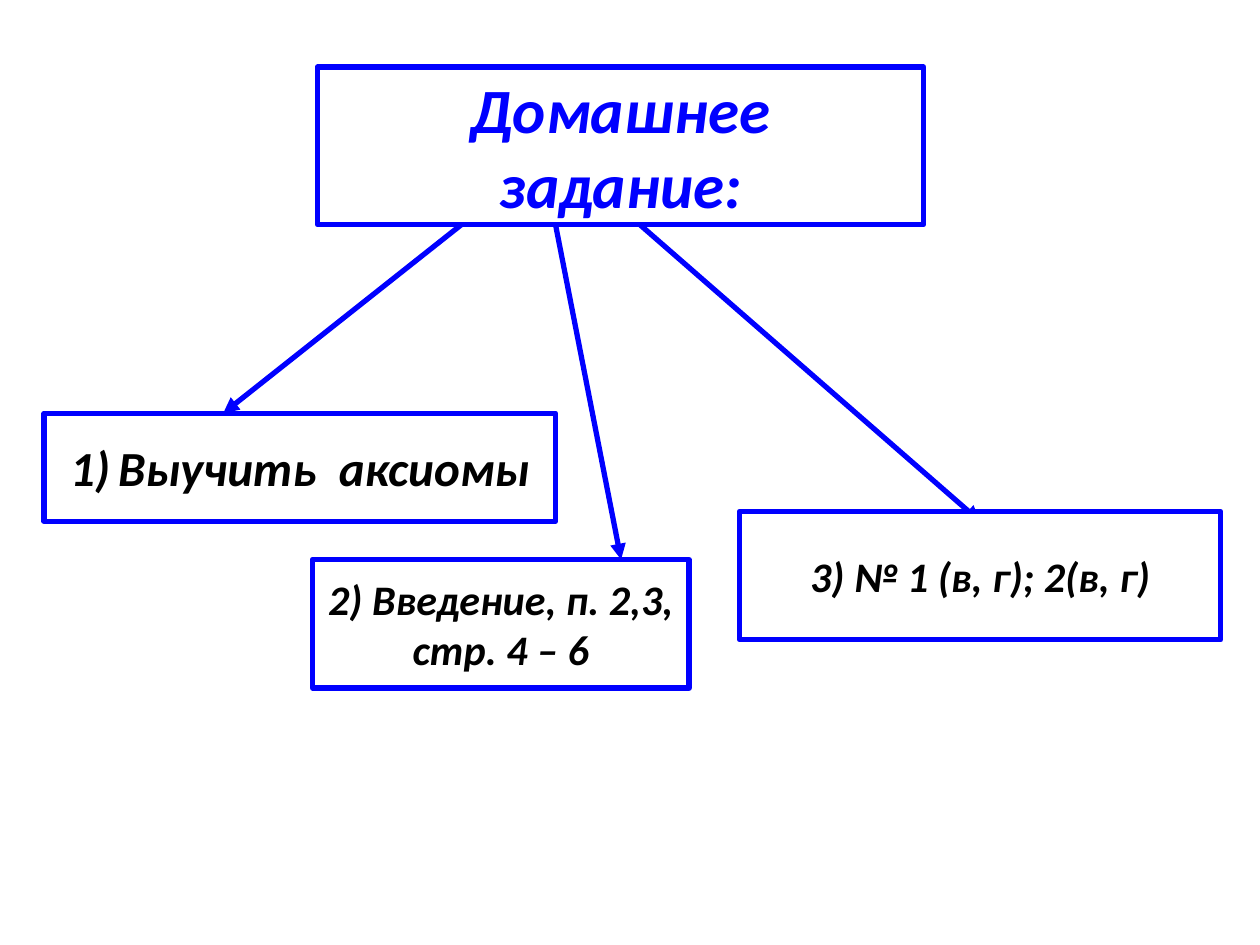
import pptx
import pptx.util
import pptx.dml.color
import pptx.enum.shapes
import pptx.enum.text
import pptx.oxml.ns
import lxml.etree

Cm, Pt = pptx.util.Cm, pptx.util.Pt
qn = pptx.oxml.ns.qn
BLUE, BLACK, WHITE = "0000FF", "000000", "FFFFFF"

# Boxes: left, top, width, height in cm
TITLE = (6.4, 1.35, 12.22, 3.18)
AXIOMS = (0.89, 8.33, 10.31, 2.18)
READING = (6.3, 11.28, 7.59, 2.59)
EXERCISES = (14.91, 10.31, 9.7, 2.59)


def rgb(color):
    return pptx.dml.color.RGBColor.from_string(color)


def style_line(line):
    line.color.rgb = rgb(BLUE)
    line.width = Pt(3)


def add_box(s, box, lines, size, color=BLACK, wrap=False):
    """Outlined box with centred bold italic text; returns its text frame."""
    sp = s.shapes.add_shape(pptx.enum.shapes.MSO_SHAPE.RECTANGLE, *map(Cm, box))
    sp.shadow.inherit = False
    sp.fill.solid()
    sp.fill.fore_color.rgb = rgb(WHITE)
    style_line(sp.line)
    tf = sp.text_frame
    tf.word_wrap = wrap
    tf.vertical_anchor = pptx.enum.text.MSO_ANCHOR.MIDDLE
    tf.text = "\n".join(lines)
    for p in tf.paragraphs:
        p.alignment = pptx.enum.text.PP_ALIGN.CENTER
        font = p.font
        font.name, font.size = "Calibri", Pt(size)
        font.bold = font.italic = True
        font.color.rgb = rgb(color)
    return tf


def number_paragraph(p):
    """Automatic "1)" numbering with a hanging indent."""
    pPr = p._p.get_or_add_pPr()
    pPr.set("marL", str(Cm(0.97)))
    pPr.set("indent", str(-Cm(0.97)))
    num = lxml.etree.Element(qn("a:buAutoNum"), type="arabicParenR")
    pPr.insert(0, num)


def add_arrow(s, source, source_dx, target, target_dx, target_dy=0):
    """Arrow from the bottom edge of one box to the top of another."""
    x, y, _, h = source
    end_x, end_y = target[:2]
    cxn = s.shapes.add_connector(
        pptx.enum.shapes.MSO_CONNECTOR.STRAIGHT,
        Cm(x + source_dx), Cm(y + h),
        Cm(end_x + target_dx), Cm(end_y + target_dy))
    style_line(cxn.line)
    ln = cxn.line._get_or_add_ln()
    lxml.etree.SubElement(ln, qn("a:tailEnd"), type="triangle")
    lxml.etree.SubElement(cxn._element.spPr, qn("a:effectLst"))


def build_homework(s):
    # Heading and first task
    add_box(s, TITLE, ["Домашнее\vзадание:"], 36, BLUE, wrap=True)
    tf = add_box(s, AXIOMS, ["Выучить  аксиомы"], 28)
    number_paragraph(tf.paragraphs[0])

    # Arrows from the heading to each task
    add_arrow(s, TITLE, 2.9, AXIOMS, 3.61)
    add_arrow(s, TITLE, 4.8, READING, 6.22)
    add_arrow(s, TITLE, 6.5, EXERCISES, 4.85, 0.2)

    # Remaining tasks, in front of the arrows
    add_box(s, READING, ["2) Введение, п. 2,3,", "стр. 4 – 6"], 24)
    add_box(s, EXERCISES, ["3) № 1 (в, г); 2(в, г)"], 24)


def main():
    prs = pptx.Presentation()
    prs.slide_width, prs.slide_height = Cm(25.4), Cm(19.05)
    s = prs.slides.add_slide(prs.slide_layouts[6])
    build_homework(s)
    prs.save("out.pptx")


if __name__ == "__main__":
    main()
